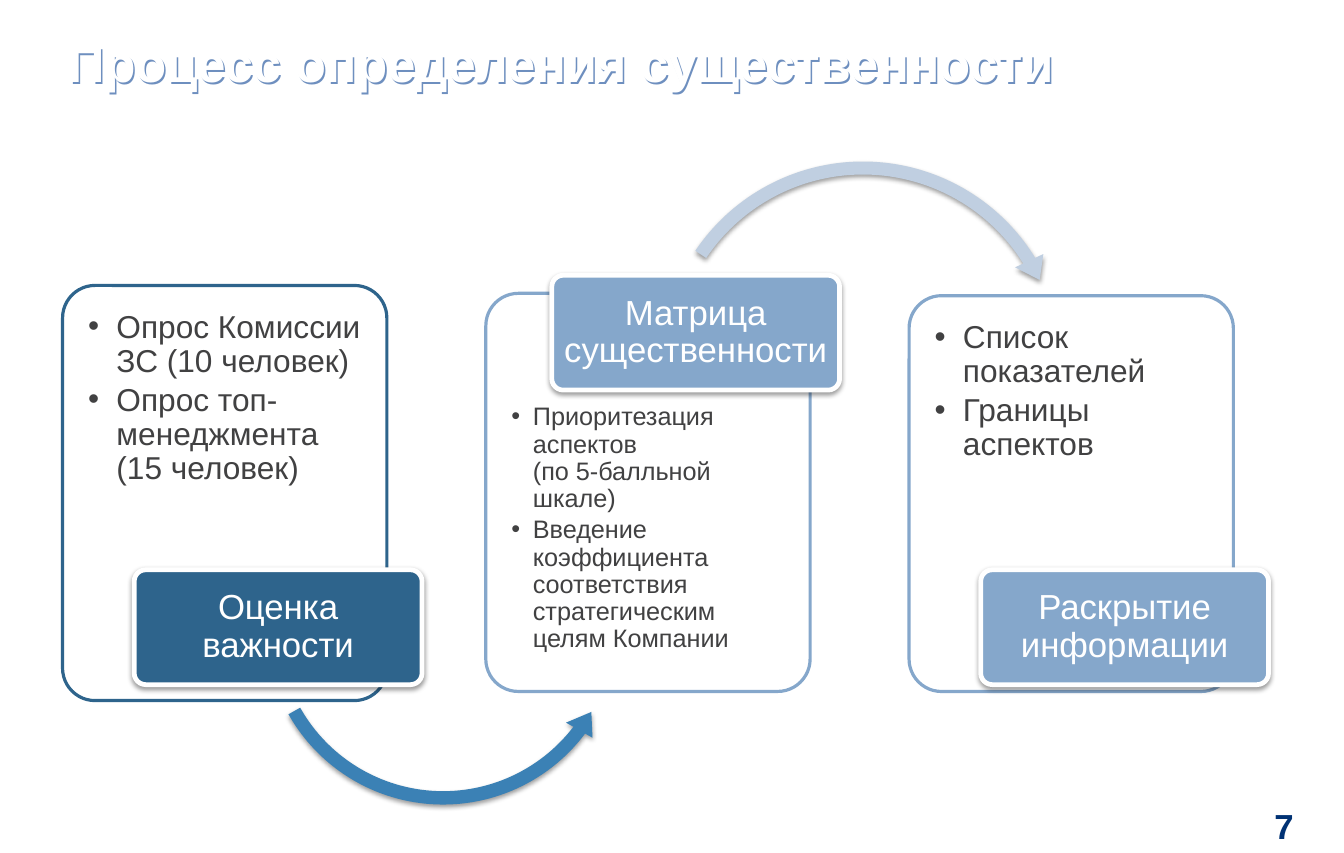
from lxml.etree import SubElement
from pptx import Presentation
from pptx.dml.color import RGBColor
from pptx.enum.shapes import MSO_SHAPE
from pptx.enum.text import MSO_ANCHOR, PP_ALIGN
from pptx.oxml.ns import qn
from pptx.util import Inches, Pt

WHITE = RGBColor(0xFF, 0xFF, 0xFF)
NAVY = RGBColor(0x00, 0x32, 0x74)
DARK_BLUE = RGBColor(0x2E, 0x64, 0x8C)
MID_BLUE = RGBColor(0x3B, 0x81, 0xB5)
LIGHT_BLUE = RGBColor(0x85, 0xA7, 0xCB)
PALE_BLUE = RGBColor(0xC0, 0xCF, 0xE1)
TITLE_SHADOW = RGBColor(0x6E, 0x8F, 0xBF)
TEXT_GRAY = RGBColor(0x41, 0x41, 0x42)
BLACK = RGBColor(0x00, 0x00, 0x00)

TITLE = "Процесс определения существенности"
PAGE_NUMBER = "7"
STAGES = [
    {"label": "Оценка важности", "color": DARK_BLUE,
     "top": 2.51, "height": 3.65, "label_at": (1.18, 5.01),
     "bullets": ["Опрос Комиссии ЗС (10 человек)",
                 "Опрос топ-менеджмента (15 человек)"],
     "size": 20, "indent": 0.25, "text_top": 0.14,
     "arrow": (MSO_SHAPE.LEFT_CIRCULAR_ARROW, 2.26, 3.88, 3.27, MID_BLUE,
               (0.036, 4.413, 22.276, 90.353, 0.041))},
    {"label": "Матрица существенности", "color": LIGHT_BLUE,
     "top": 2.58, "height": 3.5, "label_at": (4.85, 2.42),
     "bullets": ["Приоритезация аспектов\n(по 5-балльной шкале)",
                 "Введение коэффициента соответствия стратегическим целям Компании"],
     "size": 16, "indent": 0.19, "text_top": 0.89,
     "arrow": (MSO_SHAPE.CIRCULAR_ARROW, 5.73, 1.34, 3.71, PALE_BLUE,
               (0.031, 3.857, 196.979, 128.346, 0.037))},
    {"label": "Раскрытие информации", "color": LIGHT_BLUE,
     "top": 2.6, "height": 3.48, "label_at": (8.62, 5.01),
     "bullets": ["Список показателей", "Границы аспектов"],
     "size": 20, "indent": 0.25, "text_top": 0.14, "arrow": None},
]
PANEL_LEFT, PANEL_STEP, PANEL_WIDTH = 0.55, 3.72, 2.85
LABEL_WIDTH, LABEL_HEIGHT = 2.53, 1.01


def add_shadow(shape, color, opacity, blur, distance, angle):
    shape.shadow.inherit = False
    effects = shape._element.spPr.find(qn("a:effectLst"))
    shadow = SubElement(effects, qn("a:outerShdw"), blurRad=str(Pt(blur)),
                        dist=str(Pt(distance)), dir=str(angle * 60000),
                        algn="ctr", rotWithShape="0")
    shade = SubElement(shadow, qn("a:srgbClr"), val=str(color))
    SubElement(shade, qn("a:alpha"), val=str(opacity * 1000))


def set_frame(shape, insets, anchor):
    frame = shape.text_frame
    frame.word_wrap = True
    frame.vertical_anchor = anchor
    (frame.margin_left, frame.margin_top,
     frame.margin_right, frame.margin_bottom) = [Inches(inset) for inset in insets]
    return frame


def add_text(paragraph, text, size, color, align, bold=False, spacing=0.9):
    paragraph.alignment = align
    paragraph.line_spacing = spacing
    for number, line in enumerate(text.split("\n")):
        if number:
            paragraph.add_line_break()
        run = paragraph.add_run()
        run.text = line
        run.font.name = "Arial"
        run.font.size = Pt(size)
        run.font.bold = bold
        run.font.color.rgb = color


def add_bullet(paragraph, indent):
    properties = paragraph._p.get_or_add_pPr()
    properties.set("marL", str(Inches(indent)))
    properties.set("indent", str(-Inches(indent)))
    SubElement(properties, qn("a:buFont"), typeface="Arial")
    SubElement(properties, qn("a:buChar"), char="•")


def add_filled_shape(slide, kind, box, fill, line=None, line_width=0):
    shape = slide.shapes.add_shape(kind, *[Inches(length) for length in box])
    shape.shadow.inherit = False
    shape.fill.solid()
    shape.fill.fore_color.rgb = fill
    if line is None:
        shape.line.fill.background()
    else:
        shape.line.color.rgb = line
        shape.line.width = Pt(line_width)
    return shape


def add_panel(slide, left, stage):
    box = (left, stage["top"], PANEL_WIDTH, stage["height"])
    panel = add_filled_shape(slide, MSO_SHAPE.ROUNDED_RECTANGLE, box,
                             WHITE, stage["color"], 2)
    panel.adjustments[0] = 0.1
    frame = set_frame(panel, (0.14, stage["text_top"], 0.14, 0.14), MSO_ANCHOR.TOP)
    for number, text in enumerate(stage["bullets"]):
        paragraph = frame.add_paragraph() if number else frame.paragraphs[0]
        paragraph.space_after = Pt(stage["size"] * 0.15)
        add_bullet(paragraph, stage["indent"])
        add_text(paragraph, text, stage["size"], TEXT_GRAY, PP_ALIGN.LEFT)


def add_arrow(slide, kind, left, top, size, color, adjustments):
    arrow = add_filled_shape(slide, kind, (left, top, size, size), color)
    for number, value in enumerate(adjustments):
        arrow.adjustments[number] = value
    add_shadow(arrow, BLACK, 38, 3.1, 1.6, 90)


def add_label(slide, stage):
    box = (*stage["label_at"], LABEL_WIDTH, LABEL_HEIGHT)
    label = add_filled_shape(slide, MSO_SHAPE.ROUNDED_RECTANGLE, box,
                             stage["color"], WHITE, 3)
    label.adjustments[0] = 0.1
    add_shadow(label, BLACK, 38, 3.1, 1.6, 90)
    frame = set_frame(label, (0.05, 0.03, 0.05, 0.03), MSO_ANCHOR.MIDDLE)
    add_text(frame.paragraphs[0], stage["label"], 22, WHITE, PP_ALIGN.CENTER)


def add_text_box(slide, box, text, size, color, align, spacing):
    text_box = slide.shapes.add_textbox(*[Inches(length) for length in box])
    frame = set_frame(text_box, (0, 0, 0, 0), MSO_ANCHOR.MIDDLE)
    add_text(frame.paragraphs[0], text, size, color, align, True, spacing)
    return text_box


def main():
    presentation = Presentation()
    presentation.slide_width = Pt(850.5)
    presentation.slide_height = Inches(7.5)
    slide = presentation.slides.add_slide(presentation.slide_layouts[6])

    title = add_text_box(slide, (0.6, 0.09, 10.6, 0.99), TITLE, 32, WHITE,
                         PP_ALIGN.LEFT, 0.9)
    add_shadow(title, TITLE_SHADOW, 100, 0, 1.4, 45)
    add_text_box(slide, (10.76, 7.05, 0.61, 0.41), PAGE_NUMBER, 22, NAVY,
                 PP_ALIGN.RIGHT, 1.0)

    for number, stage in enumerate(STAGES):
        add_panel(slide, PANEL_LEFT + number * PANEL_STEP, stage)
        if stage["arrow"]:
            add_arrow(slide, *stage["arrow"])
        add_label(slide, stage)

    presentation.save("out.pptx")


if __name__ == "__main__":
    main()
